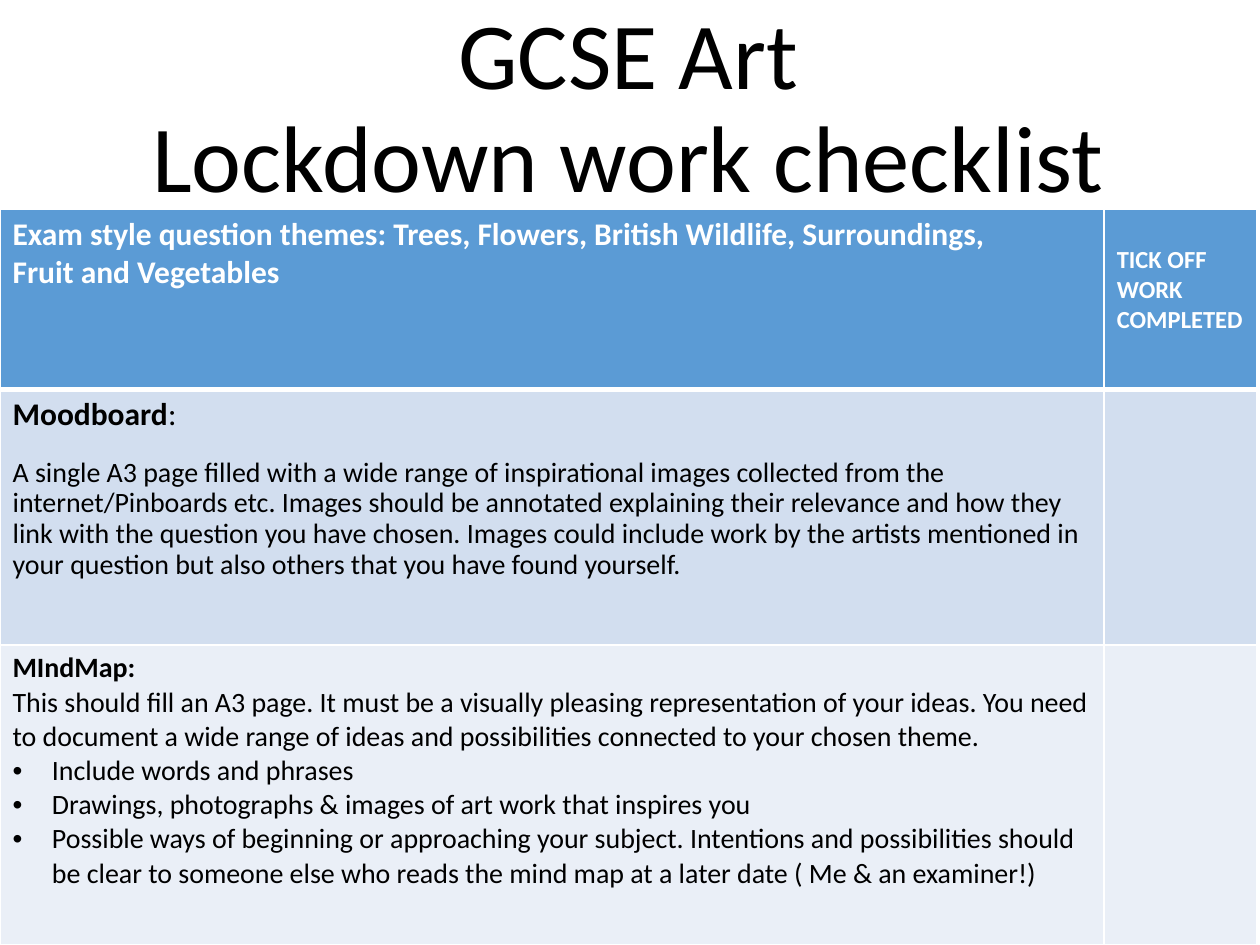
from collections import namedtuple

from lxml import etree
from pptx import Presentation
from pptx.dml.color import RGBColor
from pptx.enum import text
from pptx.oxml import ns
from pptx.util import Pt

COLOURS = {
    "ink": "000000",
    "white": "FFFFFF",
    "header": "5B9BD5",
    "band_dark": "D2DEEF",
    "band_light": "EAEFF7",
}
FONT = "Calibri"
TITLE_ONLY = 5
Box = namedtuple("Box", "left top width height")

# Each paragraph: (text, size, bold, kind)
THEMES = [
    ("Exam style question themes: Trees, Flowers, British Wildlife, Surroundings,", 18, True, "plain"),
    ("Fruit and Vegetables", 18, True, "plain"),
]
TICK = [("TICK OFF WORK COMPLETED", 14, True, "plain")]
MOODBOARD = [
    ("Moodboard:", 18, True, "label"),
    ("A single A3 page filled with a wide range of inspirational images collected from the "
     "internet/Pinboards etc. Images should be annotated explaining their relevance and how they "
     "link with the question you have chosen. Images could include work by the artists mentioned "
     "in your question but also others that you have found yourself.", 16, False, "spaced"),
]
MIND_MAP = [
    ("MIndMap:", 16, True, "plain"),
    ("This should fill an A3 page. It must be a visually pleasing representation of your ideas. "
     "You need to document a wide range of ideas and possibilities connected to your chosen theme.",
     16, False, "plain"),
    ("Include words and phrases", 16, False, "bullet"),
    ("Drawings, photographs & images of art work that inspires you", 16, False, "bullet"),
    ("Possible ways of beginning or approaching your subject. Intentions and possibilities should "
     "be clear to someone else who reads the mind map at a later date ( Me & an examiner!)",
     16, False, "bullet"),
]

# Each row: (height, fill, text colour, cells)
ROWS = [
    (103, "header", "white", [THEMES, TICK]),
    (146, "band_dark", "ink", [MOODBOARD, []]),
    (171.5, "band_light", "ink", [MIND_MAP, []]),
]
COLUMNS = [631, 87]


def style_span(span, size, bold, colour):
    span.font.name = FONT
    span.font.size = Pt(size)
    span.font.bold = bold
    span.font.color.rgb = RGBColor.from_string(COLOURS[colour])


def add_bullet(para):
    props = para._p.get_or_add_pPr()
    props.set("marL", str(Pt(22.5)))
    props.set("indent", str(Pt(-22.5)))
    etree.SubElement(props, ns.qn("a:buFont"), typeface="Arial")
    etree.SubElement(props, ns.qn("a:buChar"), char="•")


def write_cell(cell, lines, colour):
    frame = cell.text_frame
    frame.text = "\n".join(line[0] for line in lines)
    for para, (words, size, bold, kind) in zip(frame.paragraphs, lines):
        if kind == "label":
            para.text = words.rstrip(":")
            para.add_run().text = ":"
        elif kind == "spaced":
            para.line_spacing = 0.9
            para.space_before = Pt(13.3)
        elif kind == "bullet":
            add_bullet(para)
        for span in para.runs:
            style_span(span, size, bold and span.text != ":", colour)


def set_borders(cell, widths):
    props = cell._tc.get_or_add_tcPr()
    for side, width in zip(("L", "R", "T", "B"), widths):
        line = etree.SubElement(props, ns.qn("a:ln" + side), w=str(Pt(width)))
        fill = etree.SubElement(line, ns.qn("a:solidFill"))
        etree.SubElement(fill, ns.qn("a:srgbClr"), val=COLOURS["white"])


def place_title(page, box):
    title = page.shapes.title
    title.left, title.top, title.width, title.height = map(Pt, box)
    frame = title.text_frame
    frame.text = "GCSE Art\vLockdown work checklist"
    frame.word_wrap = True
    frame.auto_size = text.MSO_AUTO_SIZE.NONE
    frame.vertical_anchor = text.MSO_ANCHOR.BOTTOM
    para = frame.paragraphs[0]
    para.alignment = text.PP_ALIGN.CENTER
    para.line_spacing = 0.9
    for span in para.runs:
        style_span(span, 54, False, "ink")


def place_checklist(page, box):
    frame = page.shapes.add_table(len(ROWS), len(COLUMNS), *map(Pt, box))
    table = frame.table
    for column, width in zip(table.columns, COLUMNS):
        column.width = Pt(width)
    for index, (height, fill, colour, cells) in enumerate(ROWS):
        table.rows[index].height = Pt(height)
        # A thick rule separates the header from the body
        widths = (1, 1, 3 if index == 1 else 1, 3 if index == 0 else 1)
        for cell, lines in zip(table.rows[index].cells, cells):
            set_borders(cell, widths)
            cell.fill.solid()
            cell.fill.fore_color.rgb = RGBColor.from_string(COLOURS[fill])
            write_cell(cell, lines, colour)
    # The tick heading starts one line lower
    table.cell(0, 1).margin_top = Pt(20.6)


def main():
    deck = Presentation()
    deck.slide_width, deck.slide_height = Pt(720), Pt(540)
    page = deck.slides.add_slide(deck.slide_layouts[TITLE_ONLY])
    place_title(page, Box(0, 0, 718, 125))
    place_checklist(page, Box(0, 119.5, sum(COLUMNS), sum(row[0] for row in ROWS)))
    deck.save("out.pptx")


if __name__ == "__main__":
    main()
